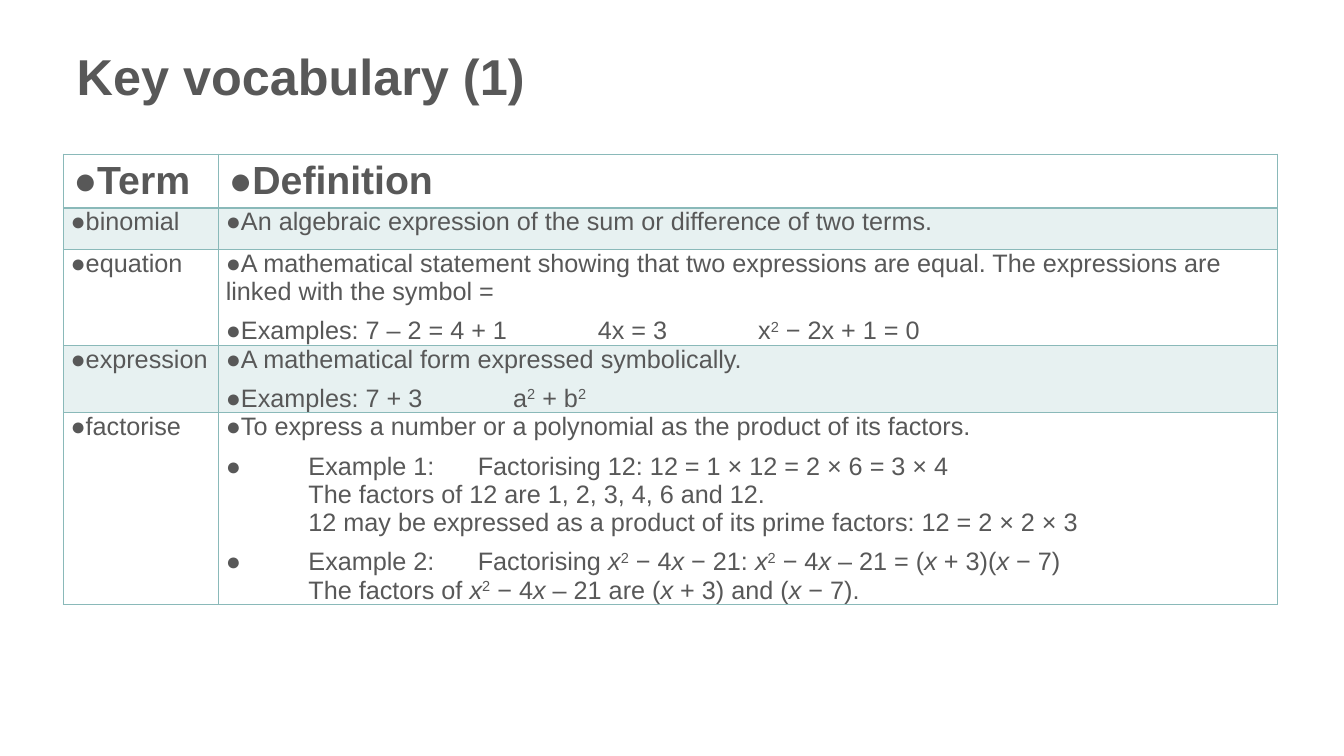
from dataclasses import dataclass

from lxml import etree
from pptx import Presentation
from pptx import util as u
from pptx.dml import color
from pptx.enum import text
from pptx.oxml import ns

COLOURS = {"ink": "585858", "teal": "8AB9B9"}
FONT = "Arial"
COLUMN_WIDTHS = [1.54, 10.5]
ROW_HEIGHTS = [0.41, 0.41, 0.41, 0.25, 0.25]


@dataclass(frozen=True)
class Span:
    wording: str
    italic: bool = False
    raised: bool = False


@dataclass(frozen=True)
class Line:
    spans: tuple[Span, ...]
    tabs: tuple[float, ...] = ()
    hanging: float = 0


@dataclass(frozen=True)
class Entry:
    term: str
    definition: tuple[Line, ...]


X = Span("x", italic=True)
SQUARED = Span("2", raised=True)


def line(*parts: str | Span, tabs: tuple[float, ...] = (), hanging: float = 0) -> Line:
    spans = tuple(Span(part) if isinstance(part, str) else part for part in parts)
    return Line(spans, tabs, hanging)


ENTRIES = [
    Entry("Term", (line("Definition"),)),
    Entry("binomial", (
        line("An algebraic expression of the sum or difference of two terms."),
    )),
    Entry("equation", (
        line("A mathematical statement showing that two expressions are equal. "
             "The expressions are linked with the symbol ="),
        line("Examples: 7 – 2 = 4 + 1\t4x = 3\tx", SQUARED, " − 2x + 1 = 0",
             tabs=(3.69, 5.28)),
    )),
    Entry("expression", (
        line("A mathematical form expressed symbolically."),
        line("Examples: 7 + 3\ta", SQUARED, " + b", SQUARED, tabs=(2.85,)),
    )),
    Entry("factorise", (
        line("To express a number or a polynomial as the product of its factors."),
        line("Example 1:\tFactorising 12: 12 = 1 × 12 = 2 × 6 = 3 × 4\n"
             "The factors of 12 are 1, 2, 3, 4, 6 and 12.\n"
             "12 may be expressed as a product of its prime factors: 12 = 2 × 2 × 3",
             hanging=0.82),
        line("Example 2:\tFactorising ", X, SQUARED, " − 4", X, " − 21: ",
             X, SQUARED, " − 4", X, " – 21 = (", X, " + 3)(", X, " − 7)\n"
             "The factors of ", X, SQUARED, " − 4", X, " – 21 are (",
             X, " + 3) and (", X, " − 7).", hanging=0.82),
    )),
]


def add_child(parent, tag: str, **attributes: str):
    child = etree.SubElement(parent, ns.qn(tag))
    for name, setting in attributes.items():
        child.set(name, setting)
    return child


def add_span(paragraph, span: Span, size: float, bold: bool) -> None:
    for index, piece in enumerate(span.wording.split("\n")):
        if index:
            paragraph.add_line_break()
        run = paragraph.add_run()
        run.text = piece
        run.font.name = FONT
        run.font.size = u.Pt(size)
        run.font.bold = bold
        run.font.italic = span.italic
        run.font.color.rgb = color.RGBColor.from_string(COLOURS["ink"])
        if span.raised:
            run.font._element.set("baseline", "30000")


def add_bullet(paragraph, content: Line) -> None:
    properties = paragraph._p.get_or_add_pPr()
    properties.set("marL", str(u.Inches(content.hanging)))
    properties.set("indent", str(-u.Inches(content.hanging)))
    bullet_colour = add_child(properties, "a:buClr")
    add_child(bullet_colour, "a:srgbClr", val=COLOURS["ink"])
    add_child(properties, "a:buFont", typeface=FONT)
    add_child(properties, "a:buChar", char="●")
    if content.tabs:
        stops = add_child(properties, "a:tabLst")
        for position in content.tabs:
            add_child(stops, "a:tab", pos=str(u.Inches(position)), algn="l")


def add_borders(cell, row: int) -> None:
    properties = cell._tc.get_or_add_tcPr()
    widths = {"L": 1, "R": 1, "T": 2 if row == 1 else 1, "B": 2 if row == 0 else 1}
    for side, width in widths.items():
        border = add_child(properties, f"a:ln{side}", w=str(u.Pt(width)))
        add_child(add_child(border, "a:solidFill"), "a:srgbClr", val=COLOURS["teal"])


def fill_cell(cell, row: int) -> None:
    if row % 2 == 0:
        cell.fill.background()
        return
    cell.fill.solid()
    cell.fill.fore_color.rgb = color.RGBColor.from_string(COLOURS["teal"])
    tint = cell._tc.tcPr.find(ns.qn("a:solidFill")).find(ns.qn("a:srgbClr"))
    add_child(tint, "a:alpha", val="20000")


def write_cell(cell, row: int, lines: tuple[Line, ...]) -> None:
    heading = row == 0
    if not heading:
        cell.margin_left = cell.margin_right = u.Inches(0.07)
        cell.margin_top = cell.margin_bottom = 0
    add_borders(cell, row)
    fill_cell(cell, row)
    for index, content in enumerate(lines):
        paragraph = cell.text_frame.add_paragraph() if index else cell.text_frame.paragraphs[0]
        add_bullet(paragraph, content)
        paragraph.space_before = u.Pt(4 if index else 0)
        paragraph.space_after = u.Pt(0 if heading else 4)
        for span in content.spans:
            add_span(paragraph, span, 28 if heading else 18, heading)


def add_title(slide) -> None:
    title = slide.shapes.title
    title.left, title.top = u.Inches(0.66), u.Inches(0.47)
    title.width, title.height = u.Inches(12), u.Inches(1.07)
    title.text_frame.word_wrap = True
    title.text_frame.vertical_anchor = text.MSO_ANCHOR.TOP
    paragraph = title.text_frame.paragraphs[0]
    paragraph.alignment = text.PP_ALIGN.LEFT
    paragraph.line_spacing = 0.9
    add_span(paragraph, Span("Key vocabulary (1)"), 36, True)


def add_vocabulary(slide) -> None:
    frame = slide.shapes.add_table(
        len(ENTRIES), len(COLUMN_WIDTHS),
        u.Inches(0.63), u.Inches(1.53), u.Inches(12.04), u.Inches(4.56))
    vocabulary = frame.table
    vocabulary.first_row = False
    vocabulary.horz_banding = False
    for column, width in zip(vocabulary.columns, COLUMN_WIDTHS):
        column.width = u.Inches(width)
    for row, height in zip(vocabulary.rows, ROW_HEIGHTS):
        row.height = u.Inches(height)
    frame.height = u.Inches(4.56)
    for row, entry in enumerate(ENTRIES):
        write_cell(vocabulary.cell(row, 0), row, (line(entry.term),))
        write_cell(vocabulary.cell(row, 1), row, entry.definition)


def main() -> None:
    deck = Presentation()
    deck.slide_width, deck.slide_height = u.Inches(13.33), u.Inches(7.5)
    slide = deck.slides.add_slide(deck.slide_layouts[5])
    add_title(slide)
    add_vocabulary(slide)
    deck.save("out.pptx")


if __name__ == "__main__":
    main()
